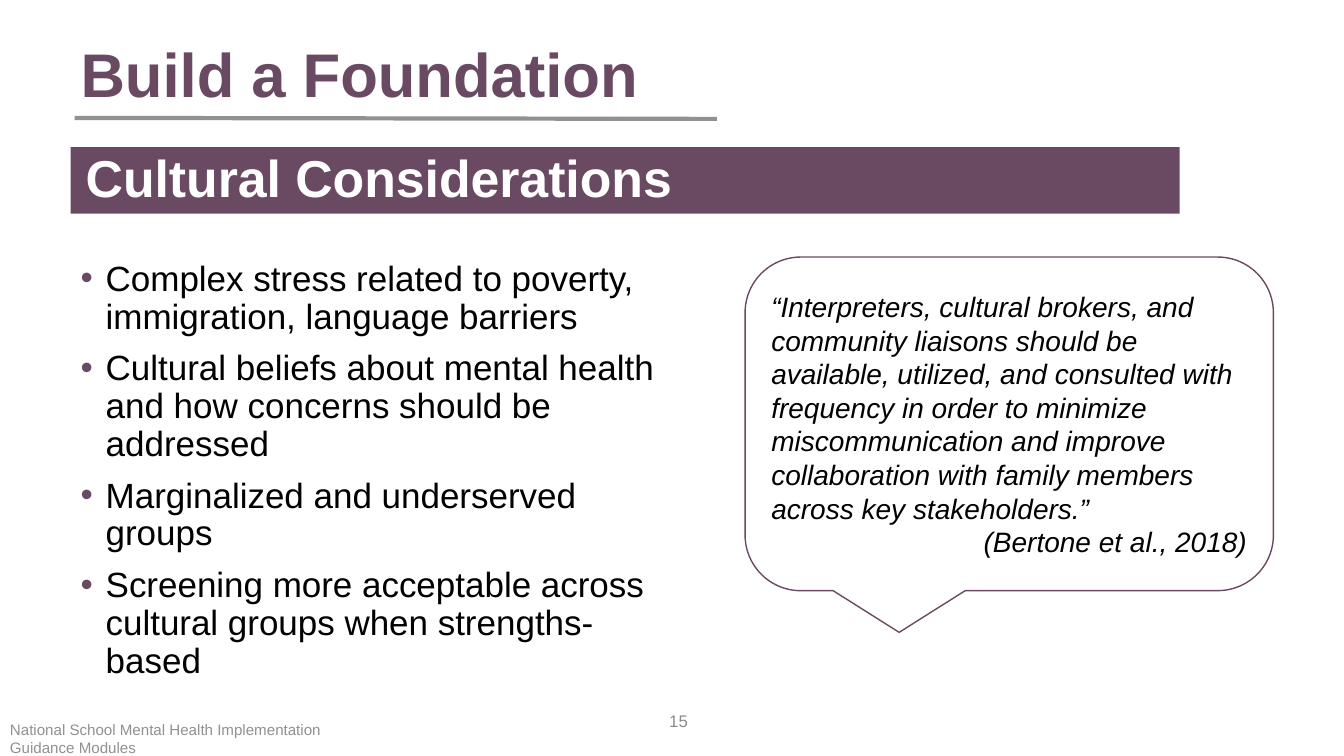
from lxml import etree
from pptx import Presentation
from pptx.dml.color import RGBColor
from pptx.enum.shapes import MSO_CONNECTOR, MSO_SHAPE
from pptx.enum.text import MSO_ANCHOR, PP_ALIGN
from pptx.oxml.ns import qn
from pptx.util import Inches, Pt

PLUM = RGBColor(0x6A, 0x4A, 0x62)
GRAY = RGBColor(0x91, 0x91, 0x95)
NUMBER_GRAY = RGBColor(0x8C, 0x8C, 0x8C)
BLACK = RGBColor(0, 0, 0)
WHITE = RGBColor(0xFF, 0xFF, 0xFF)
LEFT, RIGHT = PP_ALIGN.LEFT, PP_ALIGN.RIGHT
TOP, MIDDLE = MSO_ANCHOR.TOP, MSO_ANCHOR.MIDDLE
RECT, CALLOUT = MSO_SHAPE.RECTANGLE, MSO_SHAPE.ROUNDED_RECTANGULAR_CALLOUT
STRAIGHT = MSO_CONNECTOR.STRAIGHT
FONT = "Arial"
MARGIN = 5.25

BULLETS = [
    "Complex stress related to poverty, immigration, language barriers",
    "Cultural beliefs about mental health and how concerns should be addressed",
    "Marginalized and underserved groups",
    "Screening more acceptable across cultural groups when strengths-based",
]
QUOTE = (
    "“Interpreters, cultural brokers, and community liaisons should be available, "
    "utilized, and consulted with frequency in order to minimize miscommunication "
    "and improve collaboration with family members across key stakeholders.”"
)


class Deck:
    """Draws styled elements on one slide, with lengths in percent of its size."""

    def __init__(self):
        self.prs = Presentation()
        self.prs.slide_width, self.prs.slide_height = Inches(13.33), Inches(7.5)
        self.s = self.prs.slides.add_slide(self.prs.slide_layouts[6])

    def place(self, *shares):
        sizes = (self.prs.slide_width, self.prs.slide_height) * 2
        return [round(size * share / 100) for size, share in zip(sizes, shares)]

    def add_text(self, sp, texts, size, color, aligns=(LEFT,), anchor=TOP,
                 spacing=None, bold=False, italic=False, bullet=False):
        tf = sp.text_frame
        tf.word_wrap = True
        tf.vertical_anchor = anchor
        for i, text in enumerate(texts):
            p = tf.add_paragraph() if i else tf.paragraphs[0]
            p.alignment = aligns[i % len(aligns)]
            if spacing:
                p.line_spacing = spacing
            if bullet:
                self.add_bullet(p)
                p.space_before = Pt(10 if i else 0)
            r = p.add_run()
            r.text = text
            r.font.name, r.font.size = FONT, Pt(size)
            r.font.bold, r.font.italic = bold, italic
            r.font.color.rgb = color

    def add_bullet(self, p):
        pPr = p._p.get_or_add_pPr()
        pPr.set("marL", str(Inches(0.25)))
        pPr.set("indent", str(-Inches(0.25)))
        clr = etree.SubElement(pPr, qn("a:buClr"))
        etree.SubElement(clr, qn("a:srgbClr"), val=str(PLUM))
        etree.SubElement(pPr, qn("a:buFont"), typeface=FONT)
        etree.SubElement(pPr, qn("a:buChar"), char="•")

    def text(self, box, texts, size, color, **style):
        sp = self.s.shapes.add_textbox(*self.place(*box))
        self.add_text(sp, texts, size, color, **style)

    def shape(self, kind, box, fill, line=None):
        sp = self.s.shapes.add_shape(kind, *self.place(*box))
        sp.shadow.inherit = False
        sp.fill.solid()
        sp.fill.fore_color.rgb = fill
        if line:
            sp.line.color.rgb = line
            sp.line.width = Pt(1)
        else:
            sp.line.fill.background()
        return sp

    def banner(self, box, text):
        sp = self.shape(RECT, box, PLUM)
        tf = sp.text_frame
        tf.margin_left = tf.margin_right = Inches(0.15)
        tf.margin_top = tf.margin_bottom = Inches(0.15)
        self.add_text(sp, [text], 37, WHITE, anchor=MIDDLE, spacing=0.9, bold=True)

    def callout(self, box, texts):
        sp = self.shape(CALLOUT, box, WHITE, PLUM)
        self.add_text(sp, texts, 20, BLACK, aligns=(LEFT, RIGHT), anchor=MIDDLE,
                      italic=True)

    def rule(self, ends):
        sp = self.s.shapes.add_connector(STRAIGHT, *self.place(*ends))
        sp.line.color.rgb = GRAY
        sp.line.width = Pt(3)
        etree.SubElement(sp._element.spPr, qn("a:effectLst"))


def main():
    deck = Deck()
    deck.text((29.41, 92.67, 22.51, 5.33), ["15"], 12, NUMBER_GRAY,
              aligns=(RIGHT,), anchor=MIDDLE)
    deck.text((MARGIN, 3.07, 86.27, 14.4), ["Build a Foundation"], 44, PLUM,
              anchor=MIDDLE, spacing=0.9, bold=True)
    deck.banner((MARGIN, 19.47, 82.52, 8.8), "Cultural Considerations")
    deck.text((MARGIN, 33.87, 46.59, 63.47), BULLETS, 25, BLACK,
              spacing=0.9, bullet=True)
    deck.callout((55.44, 34, 39.31, 44.13), [QUOTE, "(Bertone et al., 2018)"])
    deck.rule((5.55, 15.6, 53.34, 15.73))
    deck.text((0, 94.67, 28.58, 5.33),
              ["National School Mental Health Implementation Guidance Modules"], 10.8, GRAY)
    deck.prs.save("out.pptx")


if __name__ == "__main__":
    main()
